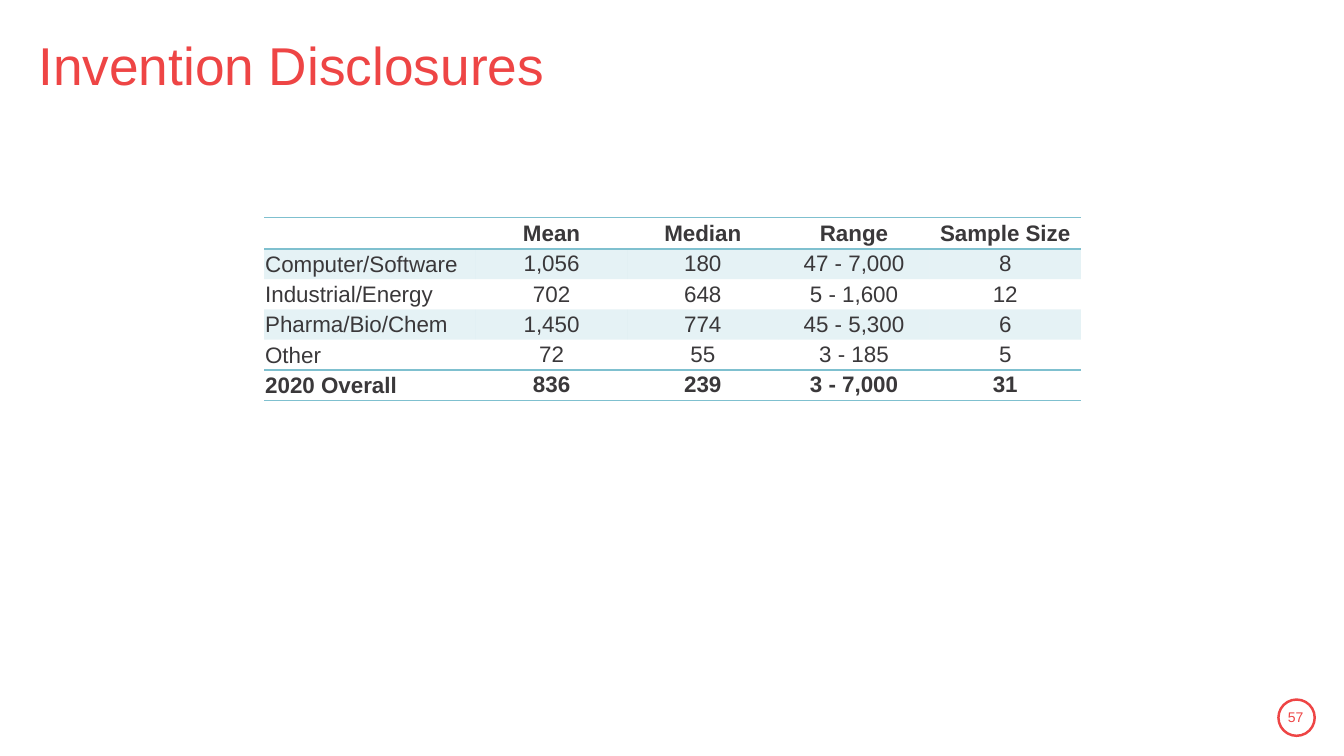
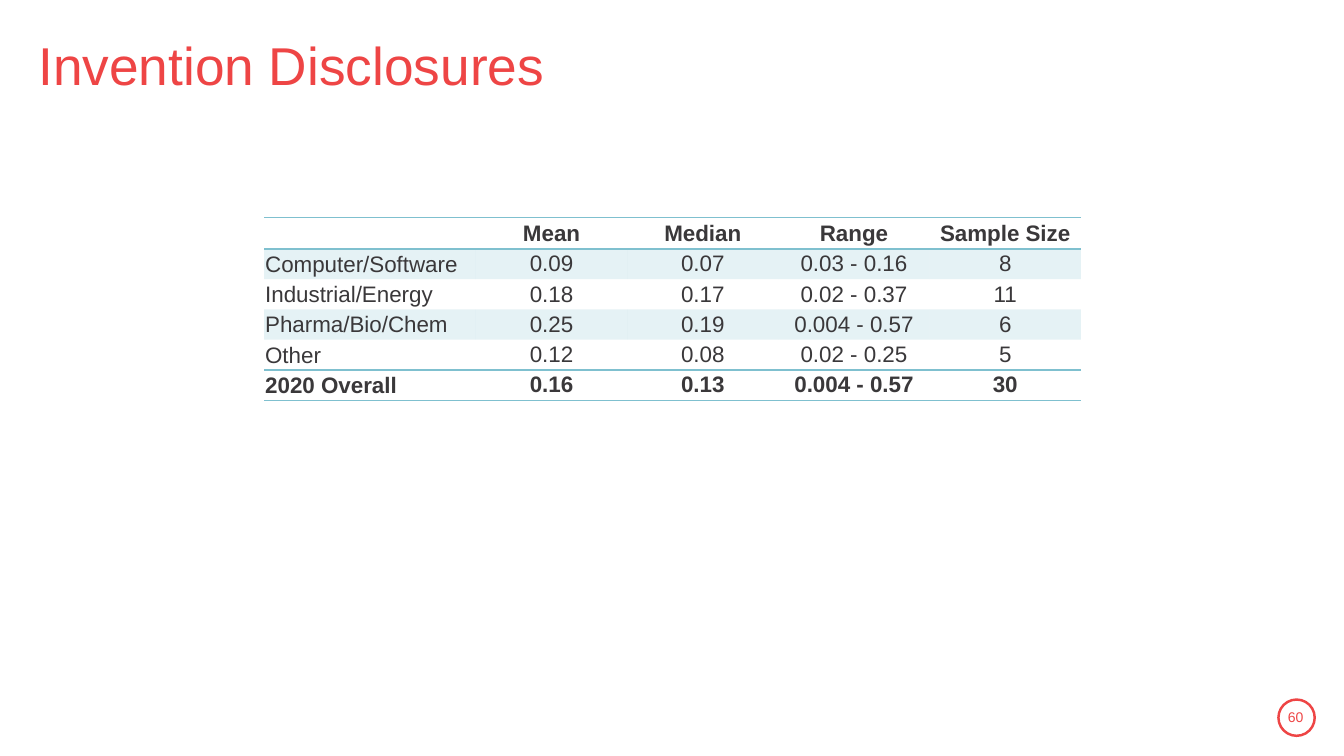
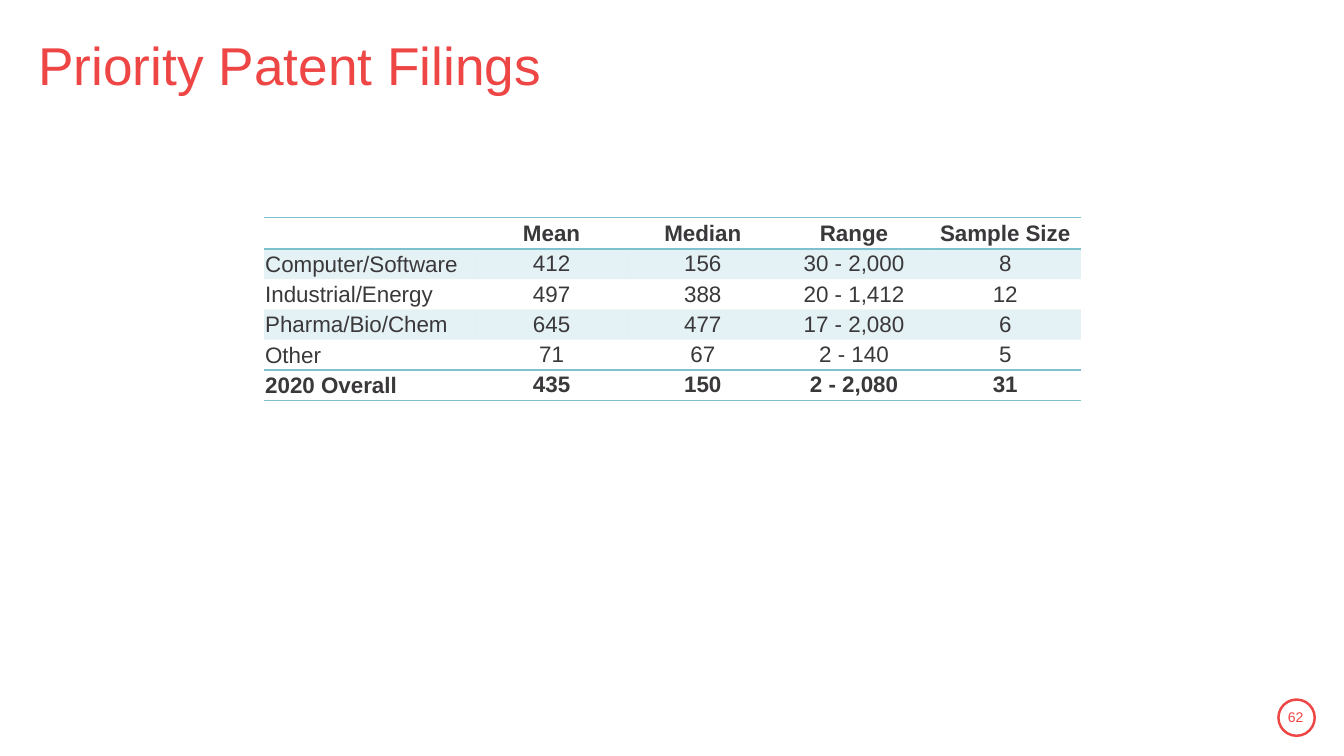
from lxml import etree
from pptx import Presentation
from pptx.dml.color import RGBColor
from pptx.enum.shapes import MSO_SHAPE
from pptx.enum.text import MSO_ANCHOR, MSO_AUTO_SIZE, PP_ALIGN
from pptx.oxml.ns import qn
from pptx.util import Pt

LEFT, CENTER = PP_ALIGN.LEFT, PP_ALIGN.CENTER
MIDDLE = MSO_ANCHOR.MIDDLE
OVAL = MSO_SHAPE.OVAL
NO_AUTOFIT = MSO_AUTO_SIZE.NONE

HEADER = ["", "Mean", "Median", "Range", "Sample Size"]
SECTORS = ["Computer/Software", "Industrial/Energy", "Pharma/Bio/Chem",
           "Other", "2020 Overall"]
SLIDES = [
    {"title": "Invention Disclosures", "number": 57, "rows": [
        ("1,056", "180", "47 - 7,000", "8"),
        ("702", "648", "5 - 1,600", "12"),
        ("1,450", "774", "45 - 5,300", "6"),
        ("72", "55", "3 - 185", "5"),
        ("836", "239", "3 - 7,000", "31")]},
    {"title": "Invention Disclosures", "number": 60, "rows": [
        ("0.09", "0.07", "0.03 - 0.16", "8"),
        ("0.18", "0.17", "0.02 - 0.37", "11"),
        ("0.25", "0.19", "0.004 - 0.57", "6"),
        ("0.12", "0.08", "0.02 - 0.25", "5"),
        ("0.16", "0.13", "0.004 - 0.57", "30")]},
    {"title": "Priority Patent Filings", "number": 62, "rows": [
        ("412", "156", "30 - 2,000", "8"),
        ("497", "388", "20 - 1,412", "12"),
        ("645", "477", "17 - 2,080", "6"),
        ("71", "67", "2 - 140", "5"),
        ("435", "150", "2 - 2,080", "31")]},
]

THEME = {
    "font": "Arial",
    "red": "EE4545", "teal": "7FC0CF", "ink": "3A383A",
    "title_size": 38, "table_size": 16, "number_size": 10,
    "ring_width": 1.75, "rule_width": 1, "band_alpha": 20,
}

PX = 9144  # EMU, 100 px to the inch
SLIDE_SIZE = (1333, 750)
TITLE_BOX = (28, 24, 1282, 87)
RING_BOX = (1268, 694, 36, 36)
NUMBER_BOX = (1262, 691, 46, 40)
TABLE_AT = (262, 216)
COLUMNS = [210] + [150] * 4
ROW_HEIGHT = 30
NO_STYLE = "{2D5ABB26-0587-4C30-8999-92F81FD0307C}"


def px(*lengths):
    return [n * PX for n in lengths]


def rgb(name):
    return RGBColor.from_string(THEME[name])


def set_all(target, values):
    for name, value in values.items():
        setattr(target, name, value)


def write(p, text, size, color, align=LEFT, bold=False):
    p.alignment = align
    r = p.add_run()
    r.text = text
    set_all(r.font, {"name": THEME["font"], "size": Pt(THEME[size]), "bold": bold})
    r.font.color.rgb = rgb(color)


def add_title(s, text):
    title = s.shapes.title
    set_all(title, dict(zip(("left", "top", "width", "height"), px(*TITLE_BOX))))
    tf = title.text_frame
    set_all(tf, {"vertical_anchor": MIDDLE, "word_wrap": True, "auto_size": NO_AUTOFIT})
    p = tf.paragraphs[0]
    p.line_spacing = 0.9
    write(p, text, "title_size", "red")


def add_page_number(s, number):
    ring = s.shapes.add_shape(OVAL, *px(*RING_BOX))
    ring.shadow.inherit = False
    ring.fill.background()
    ring.line.color.rgb = rgb("red")
    ring.line.width = Pt(THEME["ring_width"])
    tf = s.shapes.add_textbox(*px(*NUMBER_BOX)).text_frame
    set_all(tf, {"vertical_anchor": MIDDLE, "word_wrap": True})
    write(tf.paragraphs[0], str(number), "number_size", "red", CENTER)


def rule_cell(cell):
    """Draw a teal line above and below the cell."""
    tc_pr = cell._tc.get_or_add_tcPr()
    for tag in ("a:lnT", "a:lnB"):
        ln = etree.SubElement(tc_pr, qn(tag), w=str(Pt(THEME["rule_width"])))
        fill = etree.SubElement(ln, qn("a:solidFill"))
        etree.SubElement(fill, qn("a:srgbClr"), val=THEME["teal"])


def band_cell(cell):
    """Fill the cell with translucent teal."""
    cell.fill.solid()
    cell.fill.fore_color.rgb = rgb("teal")
    color = cell._tc.tcPr.find(".//" + qn("a:solidFill") + "/" + qn("a:srgbClr"))
    etree.SubElement(color, qn("a:alpha"), val=str(THEME["band_alpha"] * 1000))


def add_summary_table(s, values):
    rows = [HEADER] + [[sector, *row] for sector, row in zip(SECTORS, values)]
    frame = s.shapes.add_table(len(rows), len(COLUMNS), *px(
        *TABLE_AT, sum(COLUMNS), ROW_HEIGHT * len(rows)))
    table = frame.table
    set_all(table, {"first_row": False, "horz_banding": False})
    table._tbl.tblPr.find(qn("a:tableStyleId")).text = NO_STYLE
    for column, width in zip(table.columns, px(*COLUMNS)):
        column.width = width
    for i, row in enumerate(rows):
        table.rows[i].height = ROW_HEIGHT * PX
        ruled = i in (0, len(rows) - 1)
        for j, text in enumerate(row):
            cell = table.cell(i, j)
            label = PX if j == 0 else 0
            set_all(cell, {"vertical_anchor": MIDDLE, "margin_left": label,
                           "margin_right": label, "margin_top": label,
                           "margin_bottom": 0})
            if ruled:
                rule_cell(cell)
            if i % 2 and not ruled:
                band_cell(cell)
            else:
                cell.fill.background()
            if text:
                write(cell.text_frame.paragraphs[0], text, "table_size", "ink",
                      CENTER if j else LEFT, ruled)


def main():
    prs = Presentation()
    prs.slide_width, prs.slide_height = px(*SLIDE_SIZE)
    title_only = prs.slide_layouts[5]
    for content in SLIDES:
        s = prs.slides.add_slide(title_only)
        add_title(s, content["title"])
        add_page_number(s, content["number"])
        add_summary_table(s, content["rows"])
    prs.save("out.pptx")


if __name__ == "__main__":
    main()
